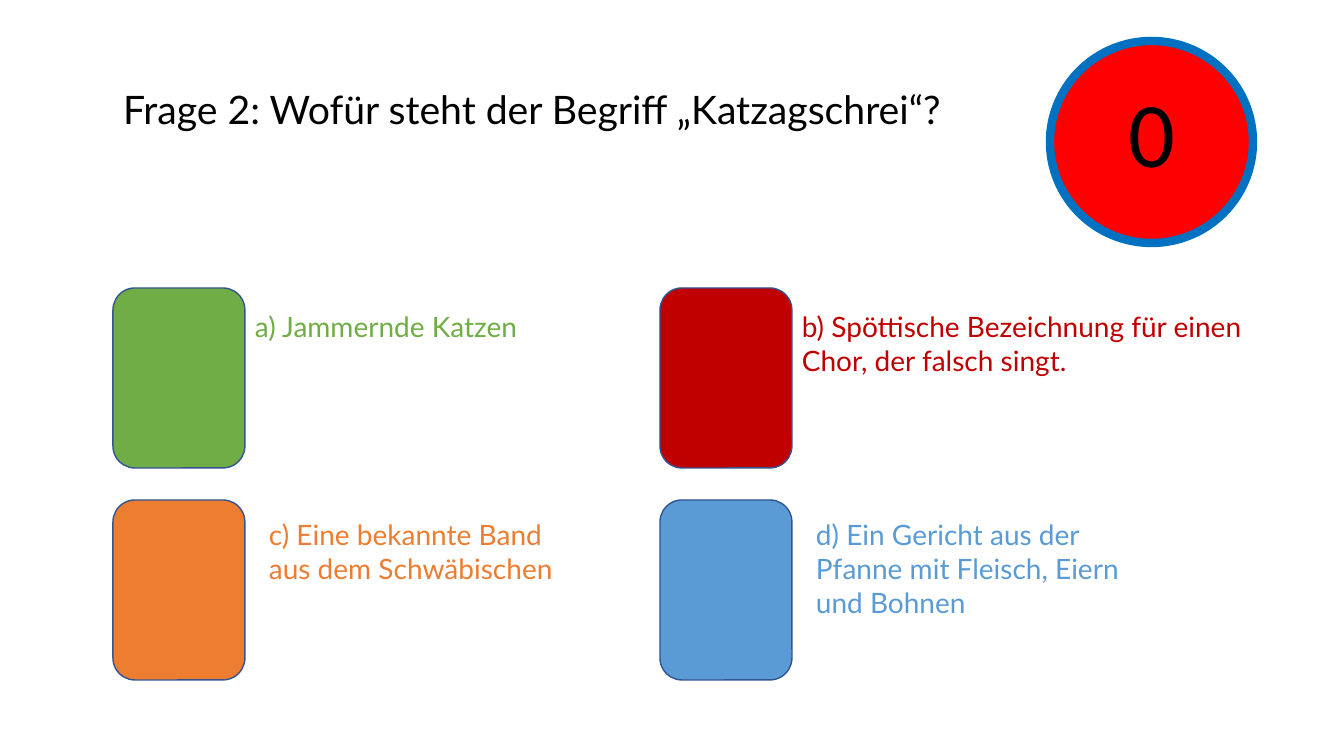
"""Builds a quiz slide with a question, a counter and four coloured answers."""
from pptx import Presentation
from pptx.dml.color import RGBColor
from pptx.enum.shapes import MSO_SHAPE as Shape
from pptx.enum.text import MSO_ANCHOR as Anchor, PP_ALIGN as Align
from pptx.util import Emu, Pt

EMU_PER_PX = 914400 / 100.8
COLORS = {
    "text": "000000",
    "border": "325491",
    "counter": "FF0000",
    "ring": "0070C0",
    "green": "70AD47",
    "red": "C00000",
    "orange": "ED7D31",
    "blue": "5B9BD5",
}
COLUMNS = (113, 660)
ROWS = (288, 500)
CARD_SIZE = (132, 180)
TEXT_OFFSETS = ((132, 17), (146, 13))
ANSWERS = (
    ("green", "a) Jammernde Katzen", 361, 44),
    ("red", "b) Spöttische Bezeichnung für einen Chor, der falsch singt.", 461, 78),
    ("orange", "c) Eine bekannte Band aus dem Schwäbischen", 318, 78),
    ("blue", "d) Ein Gericht aus der Pfanne mit Fleisch, Eiern und Bohnen", 346, 112),
)


def px(length):
    """Turn pixels into EMU."""
    return Emu(round(length * EMU_PER_PX))


def color(name):
    """Look up a named colour."""
    return RGBColor.from_string(COLORS[name])


def write(frame, text, size, color_name, font="Lato", align=Align.LEFT):
    """Fill a text frame with one formatted paragraph."""
    frame.word_wrap = True
    frame.vertical_anchor = Anchor.TOP
    frame.text = text
    para = frame.paragraphs[0]
    para.alignment = align
    para.font.name = font
    para.font.size = Pt(size)
    para.font.color.rgb = color(color_name)


def add_box(slide, kind, box, fill, line, width):
    """Add a filled, outlined shape without a shadow."""
    shape = slide.shapes.add_shape(kind, *map(px, box))
    shape.shadow.inherit = False
    shape.fill.solid()
    shape.fill.fore_color.rgb = color(fill)
    shape.line.color.rgb = color(line)
    shape.line.width = Pt(width)
    return shape


def add_question(slide, text):
    """Place the question in the title placeholder."""
    title = slide.shapes.title
    title.left, title.top, title.width, title.height = map(px, (113, 80, 848, 105))
    write(title.text_frame, text, 28, "text")


def add_answer(slide, index, answer):
    """Add one answer card and its label in the two-by-two grid."""
    color_name, text, width, height = answer
    row, column = divmod(index, 2)
    left, top = COLUMNS[column], ROWS[row]
    add_box(slide, Shape.ROUNDED_RECTANGLE, (left, top, *CARD_SIZE), color_name, "border", 1)
    shift_x, shift_y = TEXT_OFFSETS[row]
    label = slide.shapes.add_textbox(*map(px, (left + shift_x, top + shift_y, width, height)))
    write(label.text_frame, text, 20, color_name)


def add_counter(slide, text):
    """Add the round counter."""
    circle = add_box(slide, Shape.OVAL, (1050, 41, 203, 202), "counter", "ring", 6)
    write(circle.text_frame, text, 66, "text", "Calibri", Align.CENTER)


def main():
    """Build and save the deck."""
    deck = Presentation()
    deck.slide_width, deck.slide_height = px(1344), px(756)
    slide = deck.slides.add_slide(deck.slide_layouts[5])
    add_question(slide, "Frage 2: Wofür steht der Begriff „Katzagschrei“?")
    for index, answer in enumerate(ANSWERS):
        add_answer(slide, index, answer)
    add_counter(slide, "0")
    deck.save("out.pptx")


if __name__ == "__main__":
    main()
